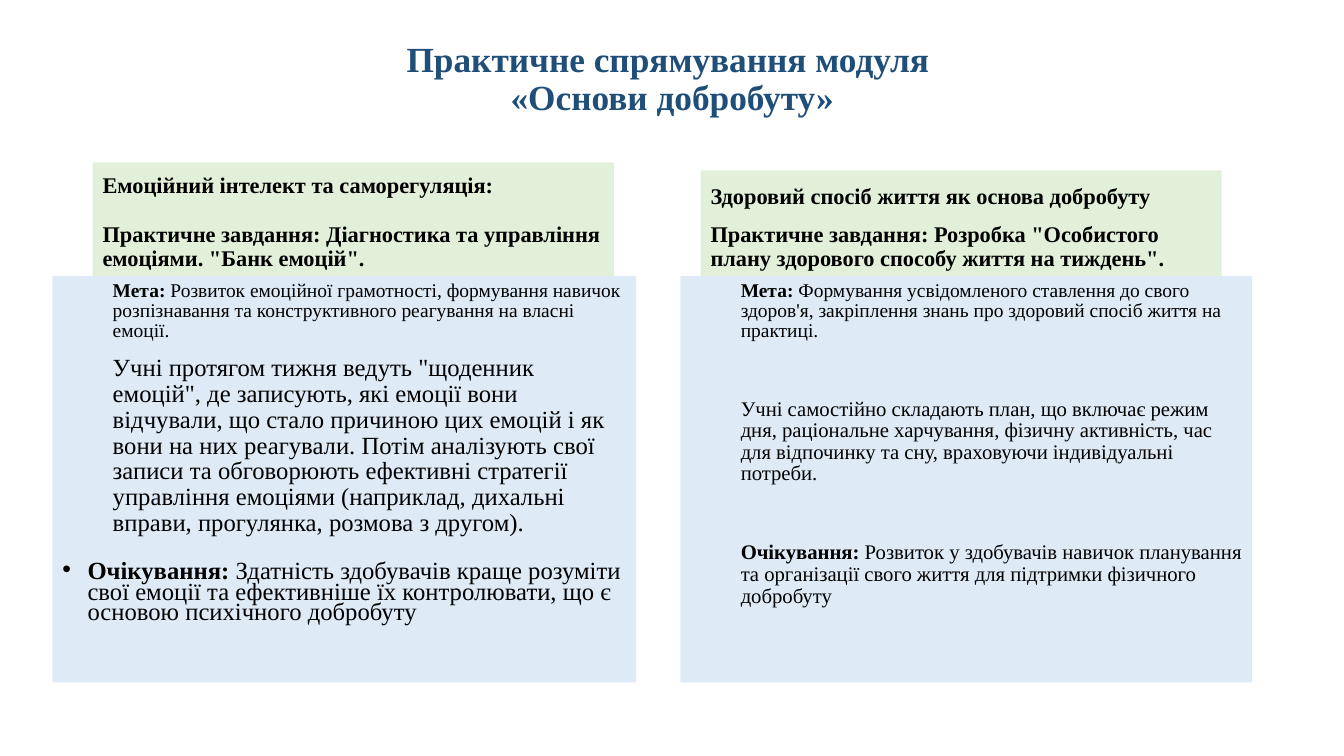
from dataclasses import dataclass

from lxml.etree import SubElement
from pptx import Presentation
from pptx.dml.color import RGBColor
from pptx.enum.shapes import MSO_SHAPE
from pptx.enum.text import MSO_ANCHOR as Anchor, PP_ALIGN as Align
from pptx.oxml.ns import qn
from pptx.util import Inches, Pt

WIDTH, HEIGHT = Inches(13.33), Inches(7.5)
COL, ROW = WIDTH / 100, HEIGHT / 100
TASK_ROW, LAST_ROW = 36.53, 90.27
FONT = "Times New Roman"
COLORS = {"title": "1F4E79", "text": "000000", "topic": "E2F0D9", "task": "DEEBF7"}


@dataclass(frozen=True)
class Line:
    strong: str
    plain: str = ""
    size: float = 16
    spacing: float = 0.9
    before: float = 0
    after: float = 0
    indent: float = 0
    bullet: bool = False
    color: str = "text"
    align: Align = Align.LEFT


@dataclass(frozen=True)
class Panel:
    fill: str
    left: float
    top: float
    width: float
    bottom: float
    anchor: Anchor
    lines: tuple[Line, ...]


def step(strong: str, plain: str, size: float, before: float = 0) -> Line:
    return Line(strong, plain, size, 0.87, before, 8, 0.5)


def write_line(paragraph, line: Line) -> None:
    paragraph.text = line.strong or line.plain
    if line.strong and line.plain:
        paragraph.add_run().text = line.plain
    paragraph.alignment = line.align
    paragraph.line_spacing = line.spacing
    paragraph.space_before = Pt(line.before)
    paragraph.space_after = Pt(line.after)
    for order, run in enumerate(paragraph.runs):
        run.font.name = FONT
        run.font.size = Pt(line.size)
        run.font.bold = bool(line.strong) and (order == 0 or not line.plain)
        run.font.color.rgb = RGBColor.from_string(COLORS[line.color])
    properties = paragraph._p.get_or_add_pPr()
    properties.set("marL", str(Inches(line.indent)))
    properties.set("indent", str(-Inches(line.indent) if line.bullet else 0))
    if line.bullet:
        SubElement(properties, qn("a:buFont")).set("typeface", "Arial")
        SubElement(properties, qn("a:buChar")).set("char", "•")


def write_lines(frame, lines: tuple[Line, ...], anchor: Anchor) -> None:
    frame.word_wrap = True
    frame.vertical_anchor = anchor
    for order, line in enumerate(lines):
        write_line(frame.add_paragraph() if order else frame.paragraphs[0], line)


def draw_title(slide) -> None:
    title = slide.shapes.add_textbox(
        round(6.9 * COL), round(5.33 * ROW), round(86.25 * COL), round(19.33 * ROW)
    )
    title.text_frame.margin_top = Inches(0.02)
    heading = Line(
        "Практичне спрямування модуля \v«Основи добробуту»",
        size=25.2, color="title", align=Align.CENTER,
    )
    write_lines(title.text_frame, (heading,), Anchor.TOP)


def draw_panel(slide, panel: Panel) -> None:
    block = slide.shapes.add_shape(
        MSO_SHAPE.RECTANGLE,
        round(panel.left * COL), round(panel.top * ROW),
        round(panel.width * COL), round((panel.bottom - panel.top) * ROW),
    )
    block.shadow.inherit = False
    block.fill.solid()
    block.fill.fore_color.rgb = RGBColor.from_string(COLORS[panel.fill])
    block.line.fill.background()
    write_lines(block.text_frame, panel.lines, panel.anchor)


PANELS = (
    Panel("topic", 6.9, 21.47, 38.78, TASK_ROW, Anchor.BOTTOM, (
        Line("Емоційний інтелект та саморегуляція:", spacing=1.07, after=8),
        Line("Практичне завдання: Діагностика та управління емоціями. "
             "\"Банк емоцій\".", before=10),
    )),
    Panel("task", 3.9, TASK_ROW, 43.43, LAST_ROW, Anchor.TOP, (
        step("Мета:", " Розвиток емоційної грамотності, формування навичок "
             "розпізнавання та конструктивного реагування на власні емоції.", 13.9),
        step("", "Учні протягом тижня ведуть \"щоденник емоцій\", де записують, "
             "які емоції вони відчували, що стало причиною цих емоцій і як вони на "
             "них реагували. Потім аналізують свої записи та обговорюють ефективні "
             "стратегії управління емоціями (наприклад, дихальні вправи, прогулянка, "
             "розмова з другом).", 17.6, 2.2),
        Line("Очікування:", " Здатність здобувачів краще розуміти свої емоції та "
             "ефективніше їх контролювати, що є основою психічного добробуту",
             17.6, 0.7, 11, indent=0.25, bullet=True),
    )),
    Panel("topic", 52.13, 22.53, 38.78, TASK_ROW, Anchor.BOTTOM, (
        Line("Здоровий спосіб життя як основа добробуту"),
        Line("Практичне завдання: Розробка \"Особистого плану здорового способу "
             "життя на тиждень\".", before=10),
    )),
    Panel("task", 50.63, TASK_ROW, 42.53, LAST_ROW, Anchor.TOP, (
        step("Мета:", " Формування усвідомленого ставлення до свого здоров'я, "
             "закріплення знань про здоровий спосіб життя на практиці.", 13.9),
        step("", "Учні самостійно складають план, що включає режим дня, "
             "раціональне харчування, фізичну активність, час для відпочинку та "
             "сну, враховуючи індивідуальні потреби.", 14.8, 32.5),
        step("Очікування: ", "Розвиток у здобувачів навичок планування та "
             "організації свого життя для підтримки фізичного добробуту", 14.8, 33),
    )),
)


def main() -> None:
    deck = Presentation()
    deck.slide_width, deck.slide_height = WIDTH, HEIGHT
    slide = deck.slides.add_slide(deck.slide_layouts[6])
    draw_title(slide)
    for panel in PANELS:
        draw_panel(slide, panel)
    deck.save("out.pptx")


if __name__ == "__main__":
    main()
